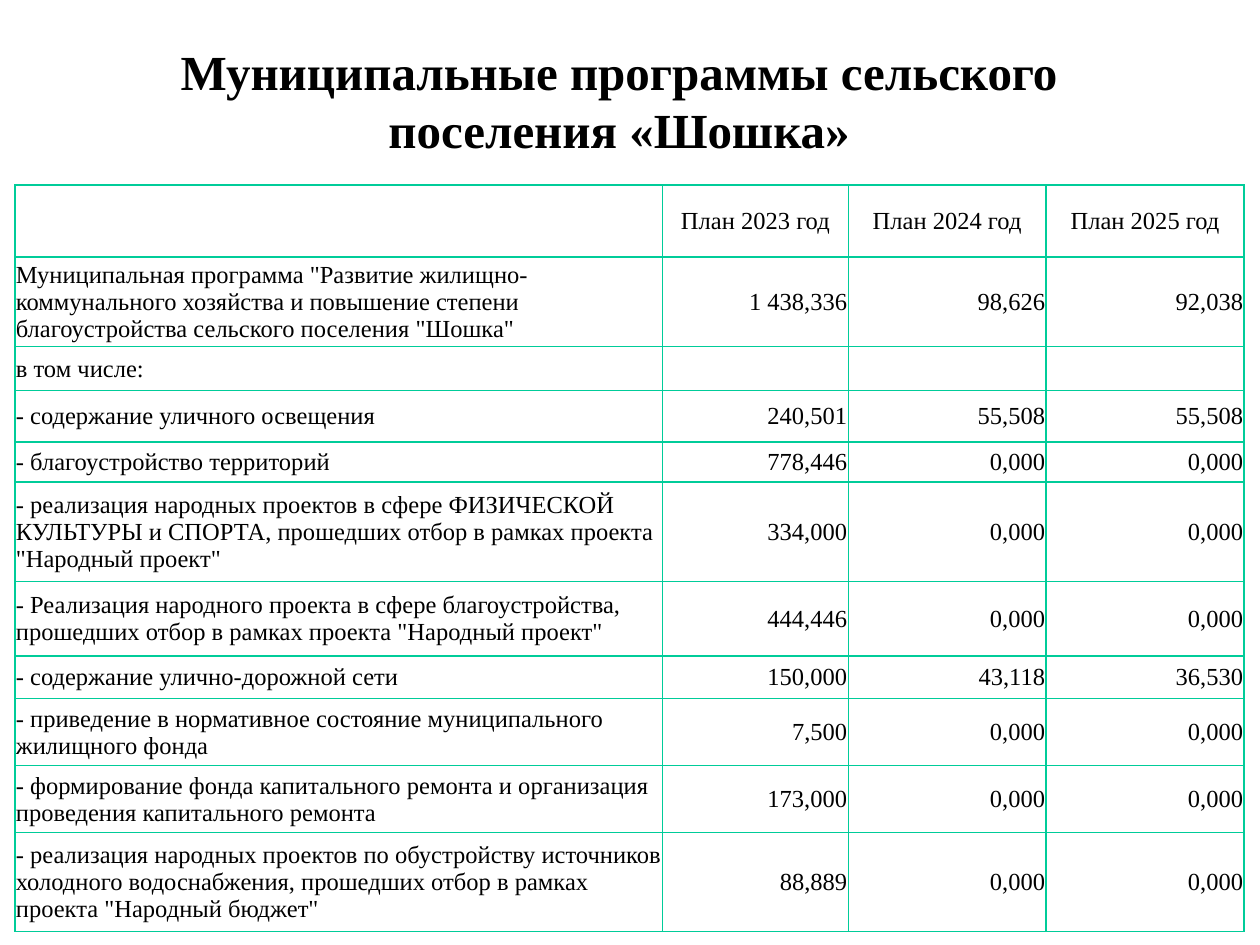
from lxml.etree import SubElement
from pptx import Presentation
from pptx.dml.color import RGBColor
from pptx.enum.text import MSO_ANCHOR, PP_ALIGN
from pptx.oxml.ns import qn
from pptx.util import Cm, Pt

BLACK = RGBColor(0x00, 0x00, 0x00)
GREEN = RGBColor(0x00, 0xCC, 0x99)
FONT = "Times New Roman"

TITLE = "Муниципальные программы сельского поселения «Шошка»"
COL_WIDTHS = [13.06, 3.74, 3.99, 3.99]
ZERO = "0,000"
# Row height in cm, then the cell texts
ROWS = [
    (1.45, "", "План 2023 год", "План 2024 год", "План 2025 год"),
    (1.78, 'Муниципальная программа "Развитие жилищно-коммунального хозяйства '
           'и повышение степени благоустройства сельского поселения "Шошка"',
     "1 438,336", "98,626", "92,038"),
    (0.89, "в том числе:", "", "", ""),
    (1.04, "- содержание уличного освещения", "240,501", "55,508", "55,508"),
    (0.81, "- благоустройство территорий", "778,446", ZERO, ZERO),
    (2.0, "- реализация народных проектов в сфере ФИЗИЧЕСКОЙ КУЛЬТУРЫ и СПОРТА, "
          'прошедших отбор в рамках проекта "Народный проект"',
     "334,000", ZERO, ZERO),
    (1.5, "- Реализация народного проекта в сфере благоустройства, "
          'прошедших отбор в рамках проекта "Народный проект"',
     "444,446", ZERO, ZERO),
    (0.86, "- содержание улично-дорожной сети", "150,000", "43,118", "36,530"),
    (1.35, "- приведение в нормативное состояние муниципального жилищного фонда",
     "7,500", ZERO, ZERO),
    (1.35, "- формирование фонда капитального ремонта и организация "
           "проведения капитального ремонта",
     "173,000", ZERO, ZERO),
    (2.0, "- реализация народных проектов по обустройству источников холодного "
          'водоснабжения, прошедших отбор в рамках проекта "Народный бюджет"',
     "88,889", ZERO, ZERO),
]


def add_run(p, text, size, bold=False):
    r = p.add_run()
    r.text = text
    r.font.name = FONT
    r.font.size = Pt(size)
    r.font.bold = bold
    r.font.color.rgb = BLACK


def add_title(slide):
    s = slide.shapes.add_textbox(Cm(2.26), Cm(0.91), Cm(19.94), Cm(2.21))
    tf = s.text_frame
    tf.word_wrap = True
    tf.vertical_anchor = MSO_ANCHOR.MIDDLE
    p = tf.paragraphs[0]
    p.alignment = PP_ALIGN.CENTER
    p_pr = p._p.get_or_add_pPr()
    p_pr.set("marL", str(Cm(0.5)))
    p_pr.set("indent", "0")
    add_run(p, TITLE, 28, bold=True)


def set_borders(cell):
    """Line all four sides; borders must precede the fill in the XML."""
    tc_pr = cell._tc.get_or_add_tcPr()
    for i, side in enumerate(("lnL", "lnR", "lnT", "lnB")):
        ln = SubElement(tc_pr, qn(f"a:{side}"), w=str(Pt(1)))
        fill = SubElement(ln, qn("a:solidFill"))
        SubElement(fill, qn("a:srgbClr"), val=str(GREEN))
        tc_pr.insert(i, ln)


def fill_cell(cell, text, align):
    cell.fill.background()
    set_borders(cell)
    cell.margin_left = cell.margin_right = cell.margin_top = Cm(0.02)
    cell.margin_bottom = 0
    cell.vertical_anchor = MSO_ANCHOR.MIDDLE
    if text:
        p = cell.text_frame.paragraphs[0]
        p.alignment = align
        add_run(p, text, 14)


def add_programme_table(slide):
    heights = [row[0] for row in ROWS]
    frame = slide.shapes.add_table(len(ROWS), len(COL_WIDTHS), Cm(0.3), Cm(3.73),
                                   Cm(sum(COL_WIDTHS)), Cm(sum(heights)))
    table = frame.table
    table.first_row = table.horz_banding = False
    for col, width in zip(table.columns, COL_WIDTHS):
        col.width = Cm(width)
    for i, (height, *texts) in enumerate(ROWS):
        table.rows[i].height = Cm(height)
        for j, text in enumerate(texts):
            if j == 0:
                align = PP_ALIGN.LEFT
            else:
                align = PP_ALIGN.CENTER if i == 0 else PP_ALIGN.RIGHT
            fill_cell(table.cell(i, j), text, align)


def main():
    prs = Presentation()
    prs.slide_width, prs.slide_height = Cm(25.4), Cm(19.05)
    slide = prs.slides.add_slide(prs.slide_layouts[6])
    add_title(slide)
    add_programme_table(slide)
    prs.save("out.pptx")


if __name__ == "__main__":
    main()
